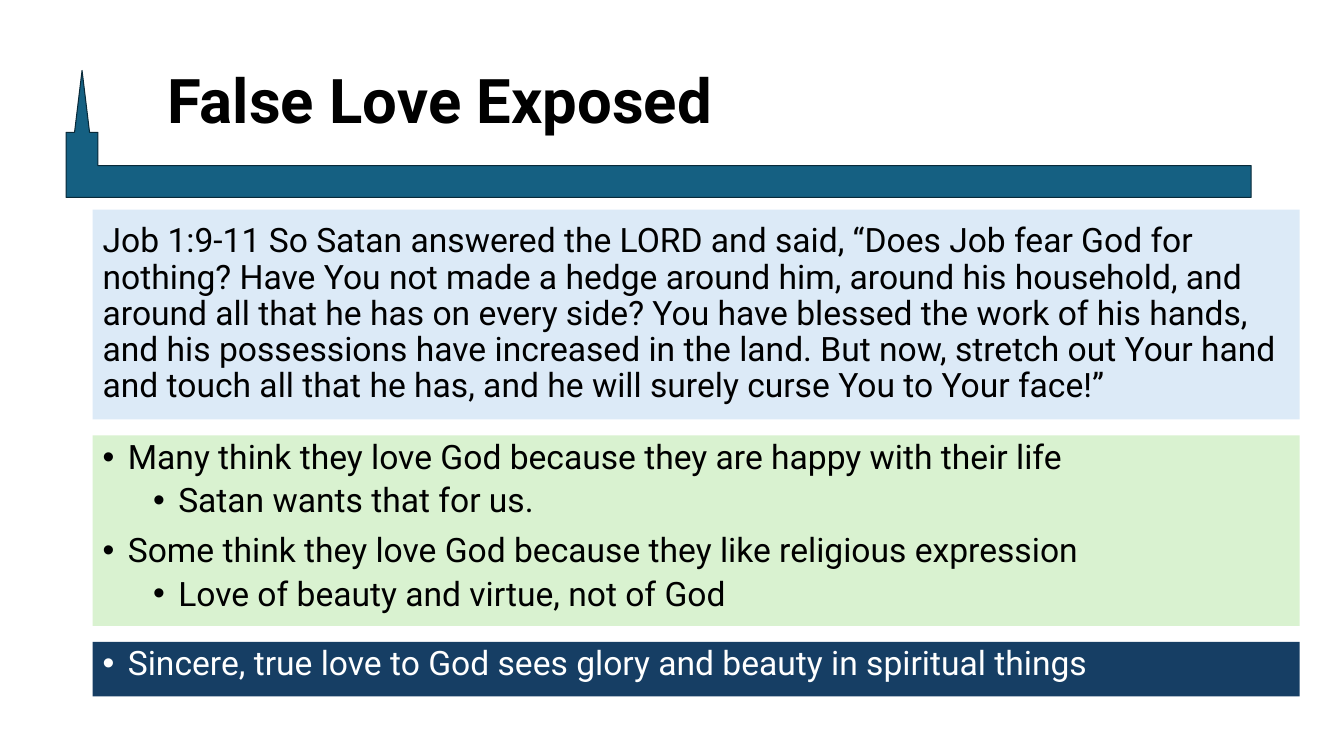
from dataclasses import dataclass

import lxml.etree
import pptx
import pptx.dml.color
import pptx.enum.shapes
import pptx.enum.text
import pptx.oxml.ns
import pptx.util

FONT = "Roboto"
BLACK = "000000"
WHITE = "FFFFFF"
SLIDE_WIDTH = pptx.util.Inches(13.33)
SLIDE_HEIGHT = pptx.util.Inches(7.5)
PANEL_LEFT, PANEL_WIDTH = 6.9, 89.8
PANELS_TOP, PANEL_GAP = 27.73, 2.13
HEADER_HEIGHT = 16.8


@dataclass(frozen=True)
class Area:
    """A rectangle in percent of the slide's width and height."""

    left: float
    top: float
    width: float
    height: float

    def lengths(self) -> tuple[int, int, int, int]:
        return (
            int(SLIDE_WIDTH * self.left / 100),
            int(SLIDE_HEIGHT * self.top / 100),
            int(SLIDE_WIDTH * self.width / 100),
            int(SLIDE_HEIGHT * self.height / 100),
        )


@dataclass(frozen=True)
class Line:
    text: str
    level: int = 0
    bullet: bool = True


@dataclass(frozen=True)
class Panel:
    height: float
    fill: str
    color: str
    lines: tuple[Line, ...]
    centred: bool = False


PANELS = (
    Panel(27.73, "DCEAF7", BLACK, (
        Line(
            "Job 1:9-11 So Satan answered the LORD and said, “Does Job fear God for "
            "nothing? Have You not made a hedge around him, around his household, and "
            "around all that he has on every side? You have blessed the work of his hands, "
            "and his possessions have increased in the land. But now, stretch out Your hand "
            "and touch all that he has, and he will surely curse You to Your face!”",
            bullet=False,
        ),
    ), centred=True),
    Panel(25.2, "D9F2D0", BLACK, (
        Line("Many think they love God because they are happy with their life"),
        Line("Satan wants that for us.", level=1),
        Line("Some think they love God because they like religious expression"),
        Line("Love of beauty and virtue, not of God", level=1),
    )),
    Panel(7.2, "163E64", WHITE, (
        Line("Sincere, true love to God sees glory and beauty in spiritual things"),
    )),
)


def rgb(color: str) -> pptx.dml.color.RGBColor:
    return pptx.dml.color.RGBColor.from_string(color)


def add_bullet(para, level: int) -> None:
    properties = para._p.get_or_add_pPr()
    properties.set("marL", str(pptx.util.Inches(0.25 + 0.5 * level)))
    properties.set("indent", str(pptx.util.Inches(-0.25)))
    for tag, name, value in (("a:buFont", "typeface", "Arial"), ("a:buChar", "char", "•")):
        mark = lxml.etree.SubElement(properties, pptx.oxml.ns.qn(tag))
        mark.set(name, value)


def write_lines(box, lines: tuple[Line, ...], size: int, color: str,
                centred: bool, bold: bool = False) -> None:
    frame = box.text_frame
    frame.word_wrap = True
    anchors = pptx.enum.text.MSO_ANCHOR
    frame.vertical_anchor = anchors.MIDDLE if centred else anchors.TOP
    for index, line in enumerate(lines):
        para = frame.add_paragraph() if index else frame.paragraphs[0]
        para.text = line.text
        para.level = line.level
        para.alignment = pptx.enum.text.PP_ALIGN.LEFT
        if line.bullet:
            add_bullet(para, line.level)
        para.line_spacing = 0.9
        if index:
            para.space_before = pptx.util.Pt(5 if line.level else 10)
        para.font.name = FONT
        para.font.size = pptx.util.Pt(size)
        para.font.bold = bold
        para.font.color.rgb = rgb(color)


def add_filled_shape(page, kind, area: Area, fill: str):
    shape = page.shapes.add_shape(kind, *area.lengths())
    shape.shadow.inherit = False
    shape.fill.solid()
    shape.fill.fore_color.rgb = rgb(fill)
    return shape


def add_steeple(page) -> None:
    """Draw the church-like bar under the title as a mirrored bent arrow."""
    area = Area(5.55, 9.33, 87.55, HEADER_HEIGHT)
    kind = pptx.enum.shapes.MSO_SHAPE.BENT_UP_ARROW
    steeple = add_filled_shape(page, kind, area, "156082")
    steeple.line.color.rgb = rgb("092A39")
    steeple.line.width = pptx.util.Pt(0.75)
    for index, share in enumerate((0.25, 0.059, 0.487)):
        steeple.adjustments[index] = share
    steeple._element.spPr.find(pptx.oxml.ns.qn("a:xfrm")).set("flipH", "1")


def add_title(page) -> None:
    area = Area(11.7, 5.33, 81.47, HEADER_HEIGHT)
    box = page.shapes.add_textbox(*area.lengths())
    title = Line("False Love Exposed", bullet=False)
    write_lines(box, (title,), 44, BLACK, centred=True, bold=True)


def add_panels(page) -> None:
    top = PANELS_TOP
    for panel in PANELS:
        area = Area(PANEL_LEFT, top, PANEL_WIDTH, panel.height)
        box = add_filled_shape(page, pptx.enum.shapes.MSO_SHAPE.RECTANGLE, area, panel.fill)
        box.line.fill.background()
        write_lines(box, panel.lines, 24, panel.color, panel.centred)
        top += panel.height + PANEL_GAP


def main() -> None:
    deck = pptx.Presentation()
    deck.slide_width = SLIDE_WIDTH
    deck.slide_height = SLIDE_HEIGHT
    page = deck.slides.add_slide(deck.slide_layouts[6])
    add_steeple(page)
    add_title(page)
    add_panels(page)
    deck.save("out.pptx")


if __name__ == "__main__":
    main()
